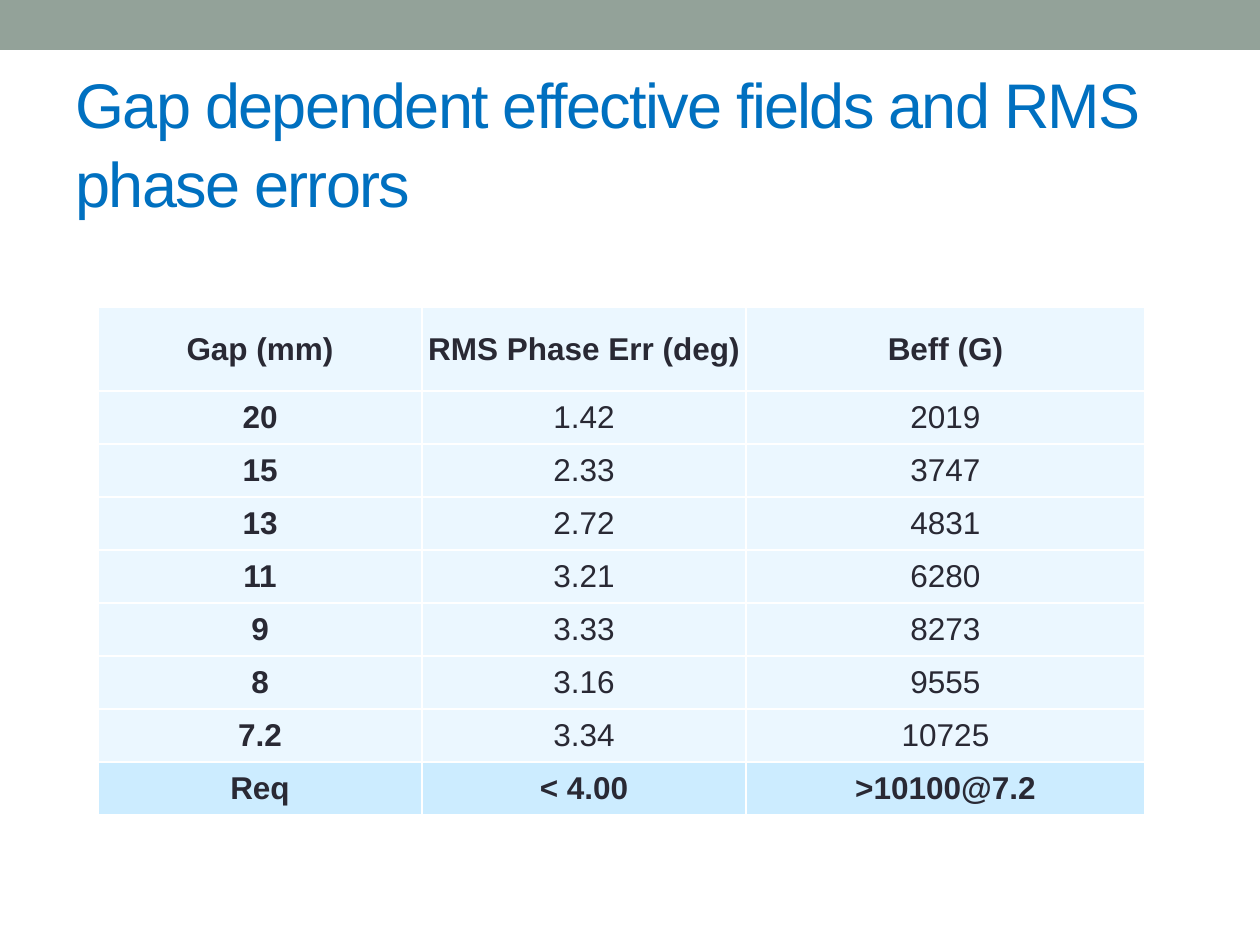
from dataclasses import dataclass

from lxml import etree
from pptx import Presentation
from pptx.dml.color import RGBColor
from pptx.enum.shapes import MSO_SHAPE
from pptx.enum.text import MSO_ANCHOR, MSO_AUTO_SIZE, PP_ALIGN
from pptx.oxml.ns import qn
from pptx.util import Pt

RECT = MSO_SHAPE.RECTANGLE
MIDDLE = MSO_ANCHOR.MIDDLE
FIXED = MSO_AUTO_SIZE.NONE
LEFT, CENTER = PP_ALIGN.LEFT, PP_ALIGN.CENTER
SCALE = 914400 / 126  # EMU per px


@dataclass(frozen=True)
class Theme:
    font: str = "Arial"
    band: str = "93A299"
    title: str = "0070C0"
    ink: str = "292934"
    cell: str = "EBF7FF"
    total: str = "CCECFF"
    rule: str = "FFFFFF"
    title_size: int = 36
    cell_size: int = 18


def px(n):
    return round(n * SCALE)


def paint(fill, color):
    fill.solid()
    fill.fore_color.rgb = RGBColor.from_string(color)


def write(frame, text, *, font, size, color, bold=False, align=LEFT,
          after=0, lead=1.0, track=0):
    para = frame.paragraphs[0]
    para.alignment = align
    para.space_after = Pt(after)
    para.line_spacing = lead
    run = para.add_run()
    run.text = text
    run.font.name = font
    run.font.size = Pt(size)
    run.font.bold = bold
    run.font.color.rgb = RGBColor.from_string(color)
    if track:
        run.font._element.set("spc", str(track * 100))


def edge(cell, color):
    """Draw a 1 pt line on all four sides of the cell."""
    props = cell._tc.get_or_add_tcPr()
    for side in ("lnL", "lnR", "lnT", "lnB"):
        line = etree.SubElement(props, qn(f"a:{side}"), w=str(Pt(1)))
        fill = etree.SubElement(line, qn("a:solidFill"))
        etree.SubElement(fill, qn("a:srgbClr"), val=color)


class Page:
    def __init__(self, slide, theme):
        self.slide = slide
        self.theme = theme

    def band(self, x, y, w, h):
        shape = self.slide.shapes.add_shape(RECT, px(x), px(y), px(w), px(h))
        shape.shadow.inherit = False
        paint(shape.fill, self.theme.band)
        shape.line.fill.background()

    def title(self, text, x, y, w, h):
        box = self.slide.shapes.title
        box.left, box.top, box.width, box.height = map(px, (x, y, w, h))
        frame = box.text_frame
        frame.word_wrap = True
        frame.auto_size = FIXED
        frame.vertical_anchor = MIDDLE
        write(frame, text, font=self.theme.font, size=self.theme.title_size,
              color=self.theme.title, lead=1.04, track=-1)

    def table(self, data, x, y, cols, rows):
        table = self.slide.shapes.add_table(
            len(rows), len(cols), px(x), px(y), px(sum(cols)), px(sum(rows))).table
        table.first_row = table.horz_banding = False
        for col, w in zip(table.columns, cols):
            col.width = px(w)
        for row, h in zip(table.rows, rows):
            row.height = px(h)
        last = len(rows) - 1
        for r, line in enumerate(data):
            for c, text in enumerate(line):
                self.cell(table.cell(r, c), text, total=r == last,
                          bold=c == 0 or r in (0, last))

    def cell(self, cell, text, total, bold):
        theme = self.theme
        cell.margin_left = cell.margin_right = cell.margin_top = px(1)
        cell.margin_bottom = 0
        cell.vertical_anchor = MIDDLE
        edge(cell, theme.rule)
        paint(cell.fill, theme.total if total else theme.cell)
        write(cell.text_frame, text, font=theme.font, size=theme.cell_size,
              color=theme.ink, bold=bold, align=CENTER, after=6 if total else 0)


DATA = [
    ("Gap (mm)", "RMS Phase Err (deg)", "Beff (G)"),
    ("20", "1.42", "2019"),
    ("15", "2.33", "3747"),
    ("13", "2.72", "4831"),
    ("11", "3.21", "6280"),
    ("9", "3.33", "8273"),
    ("8", "3.16", "9555"),
    ("7.2", "3.34", "10725"),
    ("Req", "< 4.00", ">10100@7.2"),
]


def main():
    deck = Presentation()
    deck.slide_width, deck.slide_height = px(1260), px(945)
    page = Page(deck.slides.add_slide(deck.slide_layouts[5]), Theme())
    page.band(0, 0, 1260, 50)
    page.title("Gap dependent effective fields and RMS phase errors",
               63, 73, 1134, 136)
    page.table(DATA, 98, 307, cols=[324, 324, 399],
               rows=[84] + [53] * (len(DATA) - 1))
    deck.save("out.pptx")


if __name__ == "__main__":
    main()
